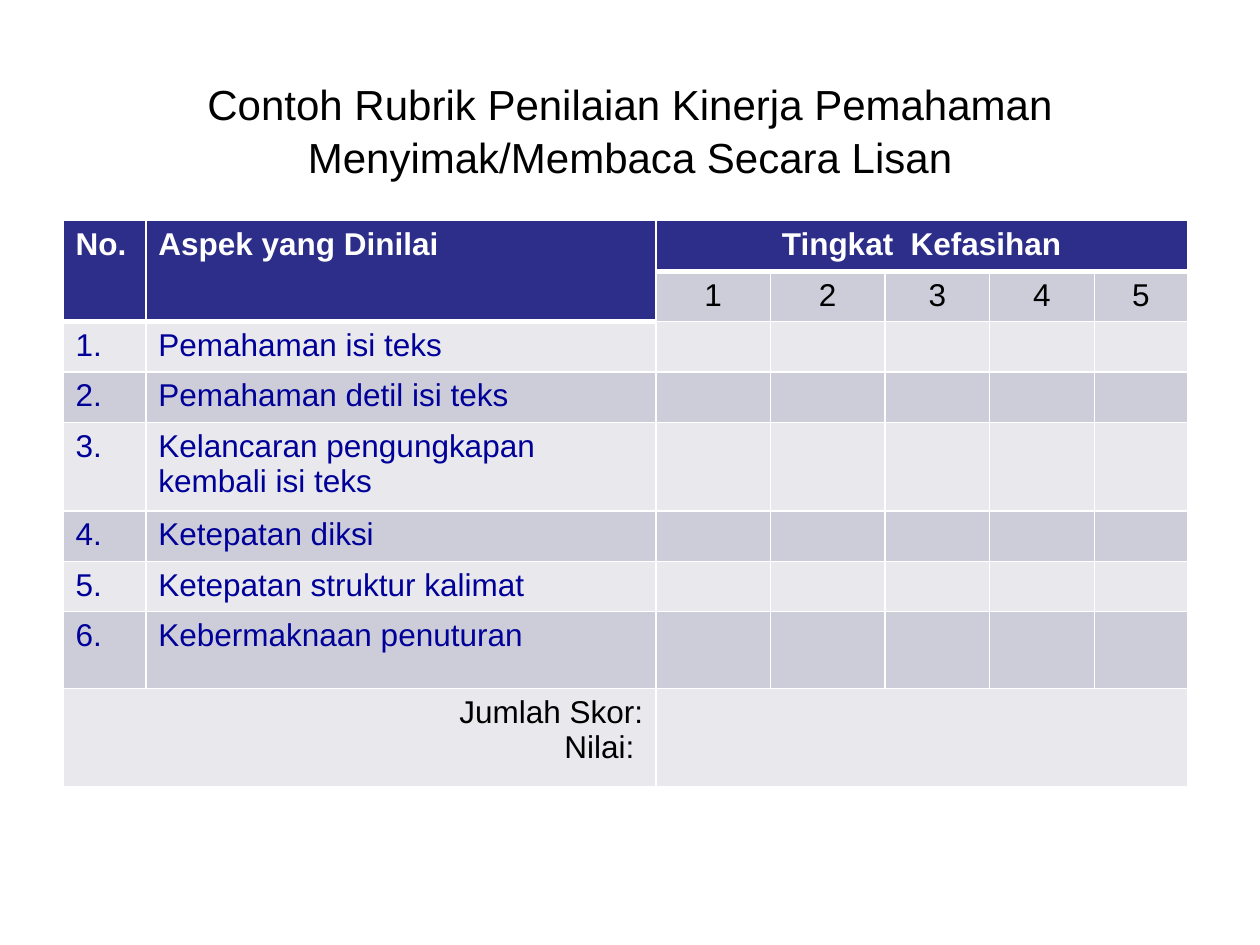
from dataclasses import dataclass

from lxml import etree
from pptx import Presentation
from pptx.dml.color import RGBColor
from pptx.enum import text as t
from pptx.oxml import ns
from pptx.util import Cm, Pt

WHITE = RGBColor(0xFF, 0xFF, 0xFF)
BLACK = RGBColor(0, 0, 0)
NAVY = RGBColor(0x2D, 0x2D, 0x8A)
BLUE = RGBColor(0, 0, 0x99)
LIGHT = RGBColor(0xE8, 0xE8, 0xED)
DARK = RGBColor(0xCD, 0xCD, 0xDA)

LEFT, MID, RIGHT = t.PP_ALIGN.LEFT, t.PP_ALIGN.CENTER, t.PP_ALIGN.RIGHT
COLS = (1.67, 10.28, 2.31, 2.31, 2.11, 2.11, 1.88)
ROWS = (0.99, 0.99, 0.99, 0.99, 1.7, 0.99, 0.99, 1.55, 1.98)
LAST = len(ROWS) - 1
ASPECTS = (
    "Pemahaman isi teks",
    "Pemahaman detil isi teks",
    "Kelancaran pengungkapan kembali isi teks",
    "Ketepatan diksi",
    "Ketepatan struktur kalimat",
    "Kebermaknaan penuturan",
)


@dataclass
class Entry:
    row: int
    col: int
    text: str
    color: RGBColor = BLUE
    align: t.PP_ALIGN = LEFT
    bold: bool = False


def write(frame, words: str, *, size: float = 18, color: RGBColor = BLACK,
          align: t.PP_ALIGN = LEFT, bold: bool = False, space: float = 1.0) -> None:
    """Fill a text frame, one paragraph for each line of words."""
    for i, line in enumerate(words.split("\n")):
        par = frame.paragraphs[0] if i == 0 else frame.add_paragraph()
        par.alignment = align
        par.line_spacing = space
        run = par.add_run()
        run.text = line
        run.font.name = "Arial"
        run.font.size = Pt(size)
        run.font.bold = bold
        run.font.color.rgb = color


def is_head(row: int, col: int) -> bool:
    return row == 0 or (row == 1 and col < 2)


def edge(cell, side: str, width: float) -> None:
    """Draw a white border on one side (L, R, T or B)."""
    line = etree.SubElement(cell._tc.get_or_add_tcPr(), ns.qn(f"a:ln{side}"),
                            w=str(Pt(width)))
    fill = etree.SubElement(line, ns.qn("a:solidFill"))
    etree.SubElement(fill, ns.qn("a:srgbClr"), val=str(WHITE))


def style(cell, row: int, col: int) -> None:
    head = is_head(row, col)
    below = row > 0 and is_head(row - 1, col) and not head
    ends = head and not is_head(row + 1, col)
    for side, thick in (("L", False), ("R", False), ("T", below), ("B", ends)):
        edge(cell, side, 3 if thick else 1)
    cell.fill.solid()
    cell.fill.fore_color.rgb = NAVY if head else DARK if row % 2 else LIGHT


def add_title(slide) -> None:
    box = slide.shapes.add_textbox(Cm(1.27), Cm(1.27), Cm(22.86), Cm(2.67))
    box.text_frame.word_wrap = True
    box.text_frame.vertical_anchor = t.MSO_ANCHOR.MIDDLE
    write(box.text_frame,
          "Contoh Rubrik Penilaian Kinerja Pemahaman Menyimak/Membaca Secara Lisan",
          size=24, align=MID, space=1.05)


def add_rubric(slide) -> None:
    grid = slide.shapes.add_table(len(ROWS), len(COLS), Cm(1.27), Cm(4.45),
                                  Cm(sum(COLS)), Cm(sum(ROWS))).table
    grid.first_row = grid.horz_banding = False
    for col, width in zip(grid.columns, COLS):
        col.width = Cm(width)
    for row, height in zip(grid.rows, ROWS):
        row.height = Cm(height)
    for r in range(len(ROWS)):
        for c in range(len(COLS)):
            style(grid.cell(r, c), r, c)

    spans = (((0, 0), (1, 0)), ((0, 1), (1, 1)), ((0, 2), (0, 6)),
             ((LAST, 0), (LAST, 1)), ((LAST, 2), (LAST, 6)))
    for start, end in spans:
        grid.cell(*start).merge(grid.cell(*end))

    items = [
        Entry(0, 0, "No.", WHITE, bold=True),
        Entry(0, 1, "Aspek yang Dinilai", WHITE, bold=True),
        Entry(0, 2, "Tingkat  Kefasihan", WHITE, MID, True),
        Entry(LAST, 0, "Jumlah Skor:\nNilai: ", BLACK, RIGHT),
    ]
    items += [Entry(1, n + 1, str(n), BLACK, MID) for n in range(1, 6)]
    for n, aspect in enumerate(ASPECTS, 1):
        items += [Entry(n + 1, 0, f"{n}."), Entry(n + 1, 1, aspect)]
    for item in items:
        write(grid.cell(item.row, item.col).text_frame, item.text,
              color=item.color, align=item.align, bold=item.bold)


def main() -> None:
    deck = Presentation()
    deck.slide_width, deck.slide_height = Cm(25.4), Cm(19.05)
    slide = deck.slides.add_slide(deck.slide_layouts[6])
    add_title(slide)
    add_rubric(slide)
    deck.save("out.pptx")


if __name__ == "__main__":
    main()
